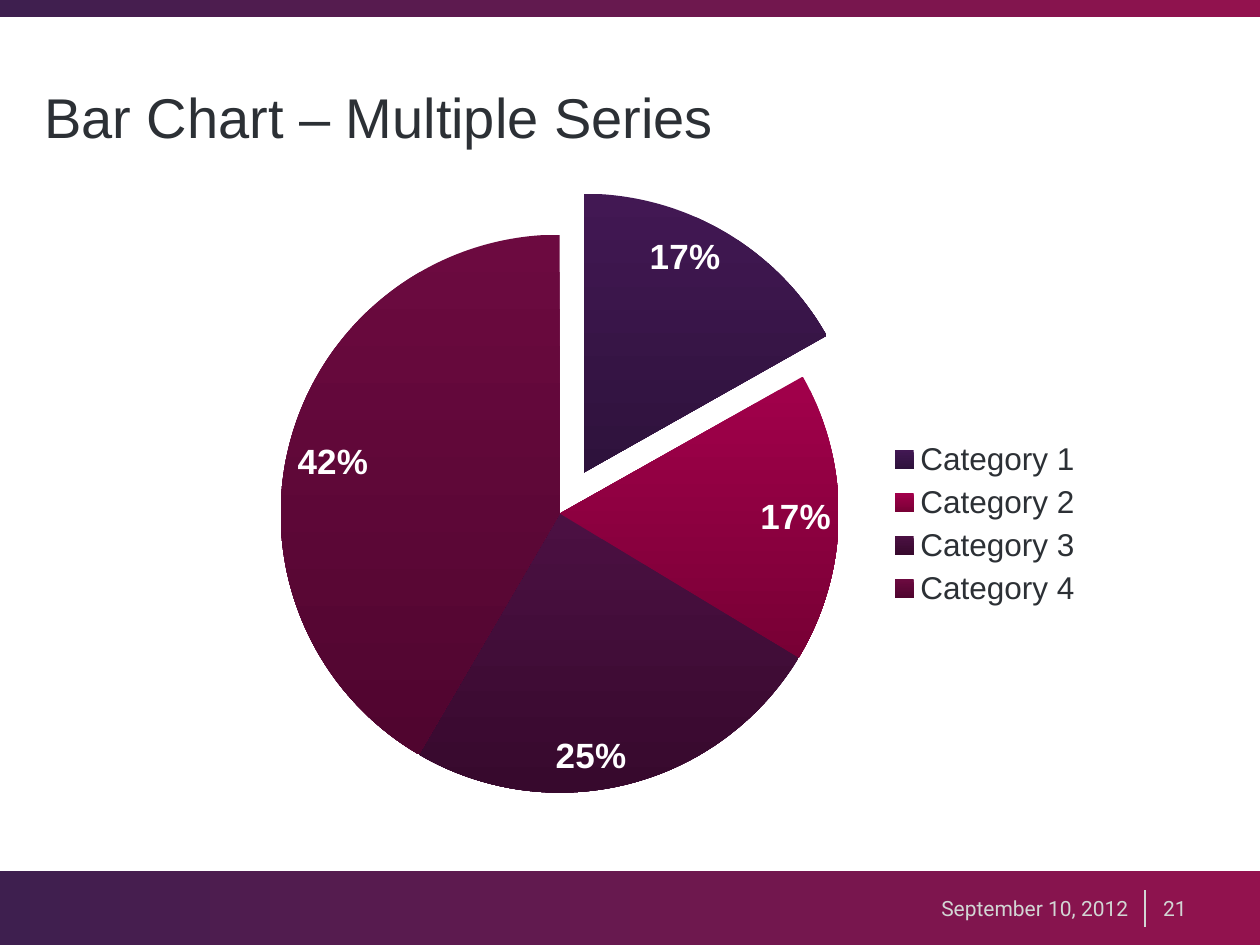
from lxml import etree
from pptx import Presentation
from pptx.chart.data import CategoryChartData
from pptx.dml.color import RGBColor
from pptx.enum.chart import XL_CHART_TYPE, XL_LABEL_POSITION, XL_LEGEND_POSITION
from pptx.enum.shapes import MSO_CONNECTOR, MSO_SHAPE
from pptx.enum.text import MSO_ANCHOR, PP_ALIGN
from pptx.oxml import parse_xml
from pptx.oxml.ns import nsdecls, qn
from pptx.util import Cm, Pt

PIE = XL_CHART_TYPE.PIE
INSIDE = XL_LABEL_POSITION.INSIDE_END
RIGHT = XL_LEGEND_POSITION.RIGHT
LINE = MSO_CONNECTOR.STRAIGHT
RECT = MSO_SHAPE.RECTANGLE
MIDDLE = MSO_ANCHOR.MIDDLE
ALIGN_L, ALIGN_R = PP_ALIGN.LEFT, PP_ALIGN.RIGHT

COLORS = {
    "ink": "2C3035", "pale": "D2D6D4", "white": "FFFFFF",
    "plum": "3E1F4F", "wine": "93124E",
}
SLICES = [("421853", "2E123C"), ("A2004B", "780035"),
          ("4B1042", "37092D"), ("6C0A40", "50052F")]
DOWN = 270


def color(name):
    return RGBColor.from_string(COLORS.get(name, name))


def style(font, **values):
    """Set font attributes; a color entry names a palette key."""
    font.color.rgb = color(values.pop("color"))
    for key, value in values.items():
        setattr(font, key, value)


def blend(fill, ends, angle):
    fill.gradient()
    fill.gradient_angle = angle
    for stop, name, place in zip(fill.gradient_stops, ends, (0, 1)):
        stop.color.rgb = color(name)
        stop.position = place


def layout(x, y, w, h, inner=False):
    """Manual chart layout, in fractions of the chart area."""
    target = '<c:layoutTarget val="inner"/>' if inner else ""
    modes = "".join(f'<c:{key}Mode val="edge"/>' for key in "xy")
    sizes = "".join(f'<c:{key} val="{val}"/>'
                    for key, val in zip("xywh", (x, y, w, h)))
    return parse_xml(f'<c:layout {nsdecls("c")}><c:manualLayout>'
                     f'{target}{modes}{sizes}</c:manualLayout></c:layout>')


class Deck:
    def __init__(self, prs):
        self.slide = prs.slides.add_slide(prs.slide_layouts[6])
        self.shapes = self.slide.shapes
        self.title = dict(name="Arial", size=Pt(32), color="ink")
        self.foot = dict(name="Roboto", size=Pt(12), color="pale")
        self.key = dict(name="Arial", size=Pt(18), color="ink")
        self.label = dict(name="Arial", size=Pt(20), bold=True, color="white")

    def band(self, top, height):
        bar = self.shapes.add_shape(RECT, 0, Cm(top), Cm(25.4), Cm(height))
        bar.shadow.inherit = False
        bar.line.fill.background()
        blend(bar.fill, ("plum", "wine"), 0)

    def rule(self, x, top, end):
        line = self.shapes.add_connector(LINE, Cm(x), Cm(top), Cm(x), Cm(end))
        line.line.color.rgb = color("pale")
        line.line.width = Pt(1)
        etree.SubElement(line._element.spPr, qn("a:effectLst"))

    def text(self, words, box, look, align=ALIGN_L, wrap=False):
        frame = self.shapes.add_textbox(*map(Cm, box)).text_frame
        form = dict(word_wrap=wrap, vertical_anchor=MIDDLE,
                    margin_top=0, margin_bottom=0)
        for key, value in form.items():
            setattr(frame, key, value)
        para = frame.paragraphs[0]
        para.alignment = align
        run = para.add_run()
        run.text = words
        style(run.font, **look)

    def pie(self, box, values):
        data = CategoryChartData()
        data.categories = [f"Category {n + 1}" for n in range(len(values))]
        data.add_series("Series 1", values)
        chart = self.shapes.add_chart(PIE, *map(Cm, box), data).chart
        chart.has_title = False
        style(chart.font, **self.key)

        chart.has_legend = True
        legend = chart.legend
        legend.position = RIGHT
        legend.include_in_layout = False
        legend._element.find(qn("c:legendPos")).addnext(
            layout(0.69, 0.38, 0.16, 0.26))
        area = chart._chartSpace.chart.plotArea
        for old in area.findall(qn("c:layout")):
            area.remove(old)
        area.insert(0, layout(0.18, 0.09, 0.47, 0.81, inner=True))

        plot = chart.plots[0]
        plot.vary_by_categories = True
        plot.has_data_labels = True
        labels = plot.data_labels
        form = dict(show_percentage=True, show_value=False, position=INSIDE,
                    number_format="0%", number_format_is_linked=False)
        for key, value in form.items():
            setattr(labels, key, value)
        style(labels.font, **self.label)

        points = plot.series[0].points
        for n, ends in enumerate(SLICES):
            blend(points[n].format.fill, ends, DOWN)
        first = plot.series[0]._element.find(qn("c:dPt"))
        first.find(qn("c:spPr")).addprevious(
            parse_xml(f'<c:explosion {nsdecls("c")} val="17"/>'))


def main():
    prs = Presentation()
    prs.slide_width, prs.slide_height = Cm(25.4), Cm(19.05)
    deck = Deck(prs)
    deck.band(17.56, 1.49)
    deck.band(0, 0.34)
    deck.rule(23.08, 17.95, 18.69)
    deck.text("Bar Chart – Multiple Series", (0.64, 0.76, 24.13, 3.18),
              deck.title, wrap=True)
    deck.text("21", (23.2, 17.55, 2.2, 1.5), deck.foot)
    deck.text("September 10, 2012", (17.08, 17.55, 5.92, 1.5),
              deck.foot, ALIGN_R)
    deck.pie((1.27, 3.48, 24.13, 13.89), (17, 17, 25, 42))
    prs.save("out.pptx")


if __name__ == "__main__":
    main()
